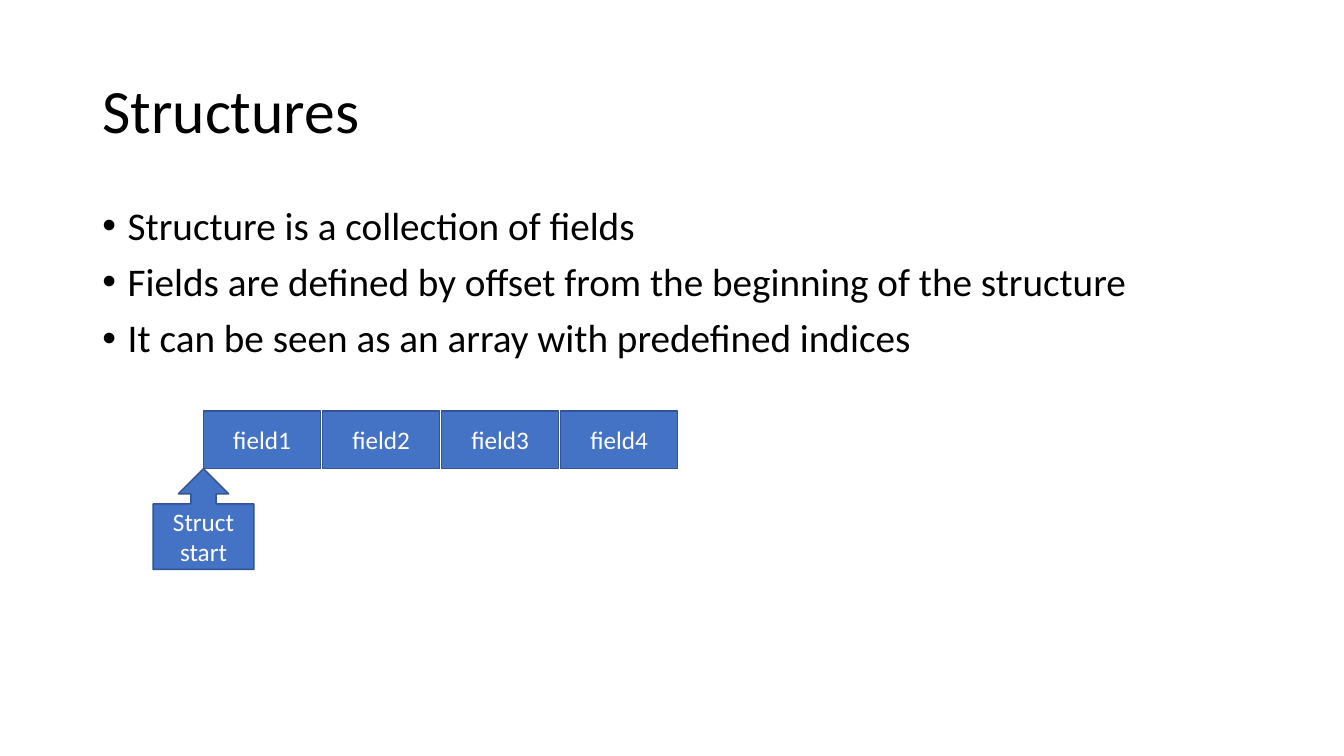
from dataclasses import dataclass

from lxml import etree
from pptx import Presentation
from pptx.dml.color import RGBColor
from pptx.enum import shapes, text
from pptx.oxml.ns import qn
from pptx.util import Cm, Pt

# Content
TITLE = "Structures"
POINTS = [
    "Structure is a collection of fields",
    "Fields are defined by offset from the beginning of the structure",
    "It can be seen as an array with predefined indices",
]
FIELDS = ["field1", "field2", "field3", "field4"]
POINTER = "Struct start"


@dataclass(frozen=True)
class Theme:
    font: str = "Calibri"
    ink: str = "000000"
    fill: str = "4472C4"
    line: str = "325491"
    label: str = "FFFFFF"
    title_size: int = 44
    body_size: int = 28
    label_size: int = 18


THEME = Theme()

# Layout in centimetres
MARGIN, TEXT_WIDTH = 2.33, 29.21
FIELD_LEFT, FIELD_TOP = 5.13, 10.36
FIELD_WIDTH, FIELD_HEIGHT, FIELD_PITCH = 2.95, 1.45, 3.0
POINTER_SIZE = 2.54
BULLET_INDENT = 0.64


def style(para, size, color):
    para.font.name = THEME.font
    para.font.size = Pt(size)
    para.font.color.rgb = RGBColor.from_string(color)


def add_text(page, lines, top, height, size, anchor):
    box = page.shapes.add_textbox(Cm(MARGIN), Cm(top), Cm(TEXT_WIDTH), Cm(height))
    frame = box.text_frame
    frame.word_wrap = True
    frame.vertical_anchor = anchor
    frame.text = "\n".join(lines)
    for para in frame.paragraphs:
        para.line_spacing = 0.9
        style(para, size, THEME.ink)
    return frame.paragraphs


def add_bullet(para):
    para.space_before = Pt(10)
    properties = para._p.get_or_add_pPr()
    properties.set("marL", str(Cm(BULLET_INDENT)))
    properties.set("indent", str(-Cm(BULLET_INDENT)))
    etree.SubElement(properties, qn("a:buFont")).set("typeface", "Arial")
    etree.SubElement(properties, qn("a:buChar")).set("char", "•")
    # Default run properties must follow the bullet
    for defaults in properties.findall(qn("a:defRPr")):
        properties.append(defaults)


def add_block(page, kind, label, left, top, width, height):
    block = page.shapes.add_shape(kind, Cm(left), Cm(top), Cm(width), Cm(height))
    block.shadow.inherit = False
    block.fill.solid()
    block.fill.fore_color.rgb = RGBColor.from_string(THEME.fill)
    block.line.color.rgb = RGBColor.from_string(THEME.line)
    block.line.width = Pt(1)
    frame = block.text_frame
    frame.word_wrap = True
    frame.vertical_anchor = text.MSO_ANCHOR.MIDDLE
    frame.text = label
    para = frame.paragraphs[0]
    para.alignment = text.PP_ALIGN.CENTER
    style(para, THEME.label_size, THEME.label)


def main():
    deck = Presentation()
    deck.slide_width, deck.slide_height = Cm(33.87), Cm(19.05)
    page = deck.slides.add_slide(deck.slide_layouts[6])

    # Title and bullet points
    add_text(page, [TITLE], 1.01, 3.68, THEME.title_size, text.MSO_ANCHOR.MIDDLE)
    for para in add_text(page, POINTS, 5.07, 12.09, THEME.body_size, text.MSO_ANCHOR.TOP):
        add_bullet(para)

    # Row of fields
    for index, field in enumerate(FIELDS):
        add_block(page, shapes.MSO_SHAPE.RECTANGLE, field,
                  FIELD_LEFT + index * FIELD_PITCH, FIELD_TOP, FIELD_WIDTH, FIELD_HEIGHT)

    # Pointer whose tip meets the lower left corner of the first field
    add_block(page, shapes.MSO_SHAPE.UP_ARROW_CALLOUT, POINTER,
              FIELD_LEFT - POINTER_SIZE / 2, FIELD_TOP + FIELD_HEIGHT,
              POINTER_SIZE, POINTER_SIZE)

    deck.save("out.pptx")


if __name__ == "__main__":
    main()
